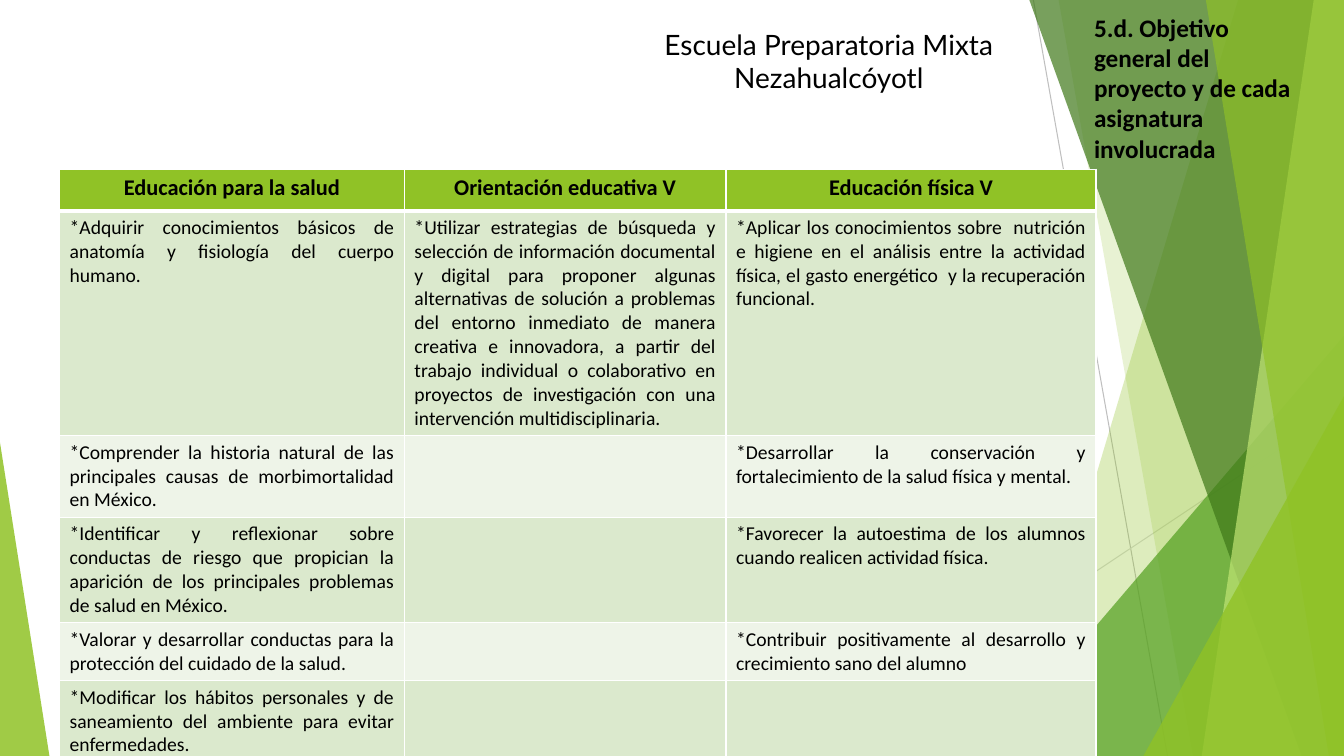
from dataclasses import dataclass

from lxml import etree
from pptx import Presentation
from pptx.dml.color import RGBColor
from pptx.enum.shapes import MSO_CONNECTOR, MSO_SHAPE
from pptx.enum.text import MSO_ANCHOR, MSO_AUTO_SIZE, PP_ALIGN
from pptx.oxml.ns import qn
from pptx.util import Inches, Pt

STRAIGHT = MSO_CONNECTOR.STRAIGHT
TRIANGLE = MSO_SHAPE.ISOSCELES_TRIANGLE
TOP, NO_FIT = MSO_ANCHOR.TOP, MSO_AUTO_SIZE.NONE
LEFT, CENTER, JUSTIFY = PP_ALIGN.LEFT, PP_ALIGN.CENTER, PP_ALIGN.JUSTIFY
TITLE_ONLY = 5
WIDTH, HEIGHT = Inches(13.33), Inches(7.5)


@dataclass(frozen=True)
class Theme:
    ink: str = "000000"
    white: str = "FFFFFF"
    lime: str = "90C226"
    green: str = "54A021"
    forest: str = "3F7819"
    pale: str = "C0E474"
    bands: tuple = ("DBE9CD", "EEF4E8")
    grey: str = "BFBFBF"
    light_grey: str = "D9D9D9"
    body: str = "Calibri"
    school: str = "Lato"
    school_size: int = 20
    title_size: int = 18
    head_size: int = 16
    cell_size: int = 14


T = Theme()

# Table content: one list per row
HEADS = ["Educación para la salud", "Orientación educativa V", "Educación física V"]
GOALS = [
    ["*Adquirir conocimientos básicos de anatomía y fisiología del cuerpo humano.",
     "*Utilizar estrategias de búsqueda y selección de información documental y digital "
     "para proponer algunas alternativas de solución a problemas del entorno inmediato "
     "de manera creativa e innovadora, a partir del trabajo individual o colaborativo "
     "en proyectos de investigación con una intervención multidisciplinaria.",
     "*Aplicar los conocimientos sobre  nutrición e higiene en el análisis entre la "
     "actividad física, el gasto energético  y la recuperación funcional."],
    ["*Comprender la historia natural de las principales causas de morbimortalidad en México.",
     "",
     "*Desarrollar la conservación y fortalecimiento de la salud física y mental."],
    ["*Identificar y reflexionar sobre conductas de riesgo que propician la aparición "
     "de los principales problemas de salud en México.",
     "",
     "*Favorecer la autoestima de los alumnos cuando realicen actividad física."],
    ["*Valorar y desarrollar conductas para la protección del cuidado de la salud.",
     "",
     "*Contribuir positivamente al desarrollo y crecimiento sano del alumno"],
    ["*Modificar los hábitos personales y de saneamiento del ambiente para evitar "
     "enfermedades.",
     "", ""],
]
COLUMNS = [25.66, 23.93, 27.53]  # percent of the slide width
LINES = [9, 3, 4, 2, 3]          # text lines per goal row
HEAD_ROW, LINE, CELL_PAD = 5.47, 3.13, 1.33  # percent of the slide height

# Background: panels run from a top x and a bottom x to the right edge
PANELS_BACK = [(92.12, 75.32, T.lime, 30), (78.77, 88.75, T.lime, 20)]
PANELS_FRONT = [(76.59, 96.85, T.forest, 70), (97.75, 89.42, T.pale, 70),
                (89.72, 98.87, T.lime, 65)]


def x(pct):
    return round(WIDTH * pct / 100)


def y(pct):
    return round(HEIGHT * pct / 100)


def box(left, top, width, height):
    return x(left), y(top), x(width), y(height)


def paint(sp, color, alpha):
    sp.shadow.inherit = False
    sp.line.fill.background()
    sp.fill.solid()
    sp.fill.fore_color.rgb = RGBColor.from_string(color)
    clr = sp._element.spPr.find(qn("a:solidFill"))[0]
    etree.SubElement(clr, qn("a:alpha"), val=str(alpha * 1000))


def add_panel(s, top, bottom, color, alpha):
    fb = s.shapes.build_freeform(x(top), 0)
    fb.add_line_segments([(WIDTH, 0), (WIDTH, HEIGHT), (x(bottom), HEIGHT)])
    paint(fb.convert_to_shape(), color, alpha)


def add_triangle(s, left, top, width, apex, color, alpha):
    sp = s.shapes.add_shape(TRIANGLE, *box(left, top, width, 100 - top))
    sp.adjustments[0] = apex
    paint(sp, color, alpha)


def add_line(s, x1, y1, x2, y2, color):
    c = s.shapes.add_connector(STRAIGHT, x(x1), y(y1), x(x2), y(y2))
    c.line.color.rgb = RGBColor.from_string(color)
    c.line.width = Pt(0.75)
    etree.SubElement(c._element.spPr, qn("a:effectLst"))


def write(tf, text, align, font, size, bold=False):
    p = tf.paragraphs[0]
    p.alignment = align
    r = p.add_run()
    r.text = text
    for name, value in {"name": font, "size": Pt(size), "bold": bold}.items():
        setattr(r.font, name, value)
    r.font.color.rgb = RGBColor.from_string(T.ink)


def set_frame(tf):
    form = {"word_wrap": True, "auto_size": NO_FIT, "vertical_anchor": TOP,
            "margin_left": Inches(0.1), "margin_right": Inches(0.1),
            "margin_top": Inches(0.05), "margin_bottom": Inches(0.05)}
    for name, value in form.items():
        setattr(tf, name, value)


def add_borders(cell, bottom):
    tcPr = cell._tc.get_or_add_tcPr()
    for side, width in {"lnL": 1, "lnR": 1, "lnT": 1, "lnB": bottom}.items():
        ln = etree.SubElement(tcPr, qn(f"a:{side}"), w=str(Pt(width)))
        fill = etree.SubElement(ln, qn("a:solidFill"))
        etree.SubElement(fill, qn("a:srgbClr"), val=T.white)


def fill_cell(cell, text, color, bottom, *style):
    add_borders(cell, bottom)
    cell.fill.solid()
    cell.fill.fore_color.rgb = RGBColor.from_string(color)
    if text:
        write(cell.text_frame, text, *style)


def add_goals(s):
    heights = [HEAD_ROW] + [n * LINE + CELL_PAD for n in LINES]
    frame = s.shapes.add_table(len(heights), len(COLUMNS),
                               *box(4.43, 22.4, sum(COLUMNS), sum(heights)))
    table = frame.table
    for col, width in zip(table.columns, COLUMNS):
        col.width = x(width)
    for row, height in zip(table.rows, heights):
        row.height = y(height)
    for j, head in enumerate(HEADS):
        fill_cell(table.cell(0, j), head, T.lime, 3, CENTER, T.body, T.head_size, True)
    for i, goals in enumerate(GOALS):
        for j, goal in enumerate(goals):
            fill_cell(table.cell(i + 1, j), goal, T.bands[i % 2], 1,
                      JUSTIFY, T.body, T.cell_size)


def add_background(s):
    add_line(s, 76.89, 0, 86.87, 100, T.grey)
    add_line(s, 100, 53.73, 60.92, 100, T.light_grey)
    for panel in PANELS_BACK:
        add_panel(s, *panel)
    add_triangle(s, 73.29, 44.4, 26.71, 1, T.green, 72)
    for panel in PANELS_FRONT:
        add_panel(s, *panel)
    add_triangle(s, 85.07, 52.4, 14.93, 1, T.lime, 80)
    add_triangle(s, 0, 58.53, 3.68, 0, T.lime, 85)


def add_school(s):
    tb = s.shapes.add_textbox(*box(41.71, 2.93, 39.91, 5.87))
    set_frame(tb.text_frame)
    write(tb.text_frame, "Escuela Preparatoria Mixta Nezahualcóyotl",
          CENTER, T.school, T.school_size)


def set_title(s):
    title = s.shapes.title
    title.left, title.top, title.width, title.height = box(80.65, 0.93, 16.65, 21.6)
    set_frame(title.text_frame)
    write(title.text_frame,
          "5.d. Objetivo general del proyecto y de cada asignatura involucrada",
          LEFT, T.body, T.title_size, True)
    s.shapes._spTree.append(title._element)  # in front of the panels


def main():
    prs = Presentation()
    prs.slide_width, prs.slide_height = WIDTH, HEIGHT
    s = prs.slides.add_slide(prs.slide_layouts[TITLE_ONLY])
    add_background(s)
    add_school(s)
    set_title(s)
    add_goals(s)
    prs.save("out.pptx")


if __name__ == "__main__":
    main()
